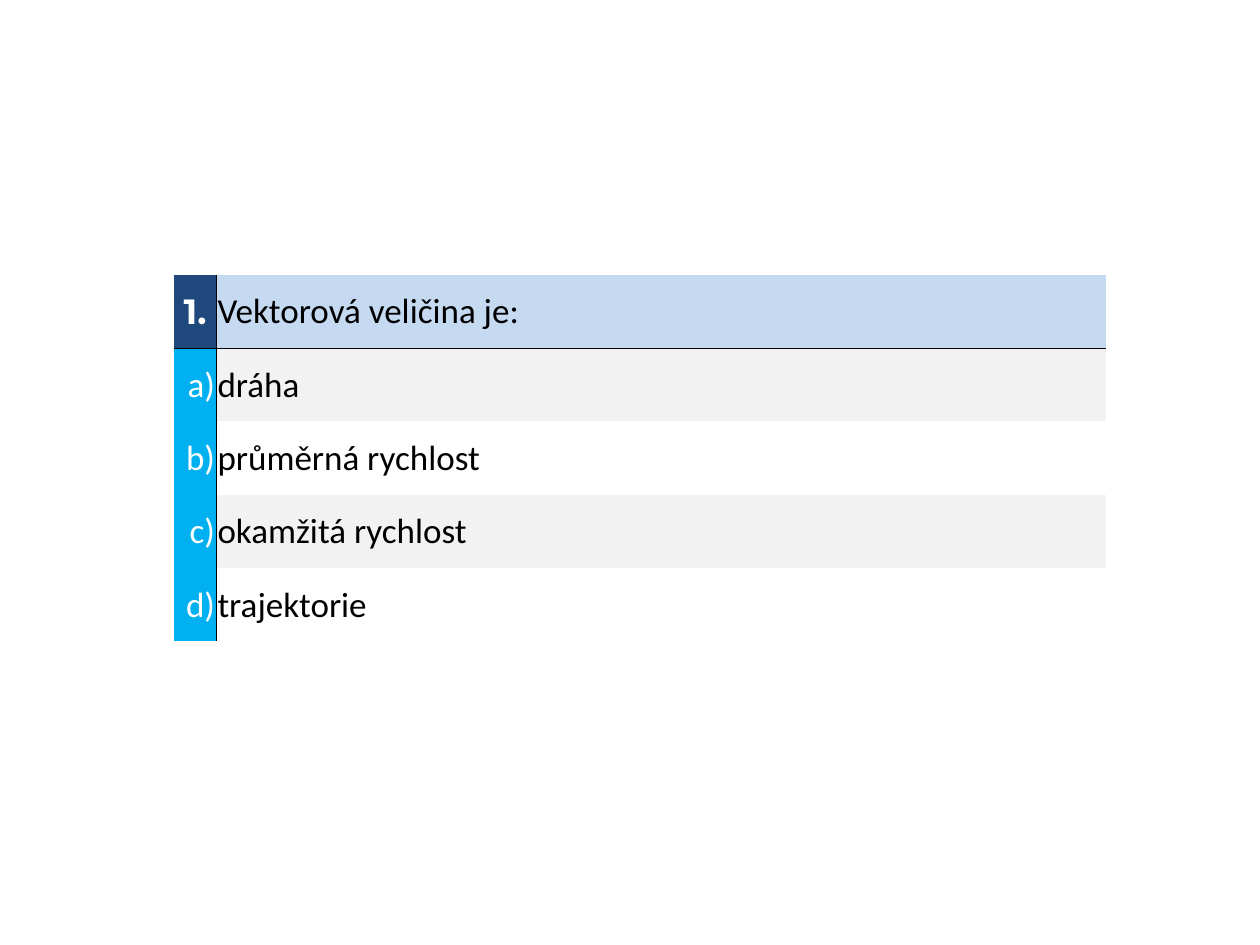
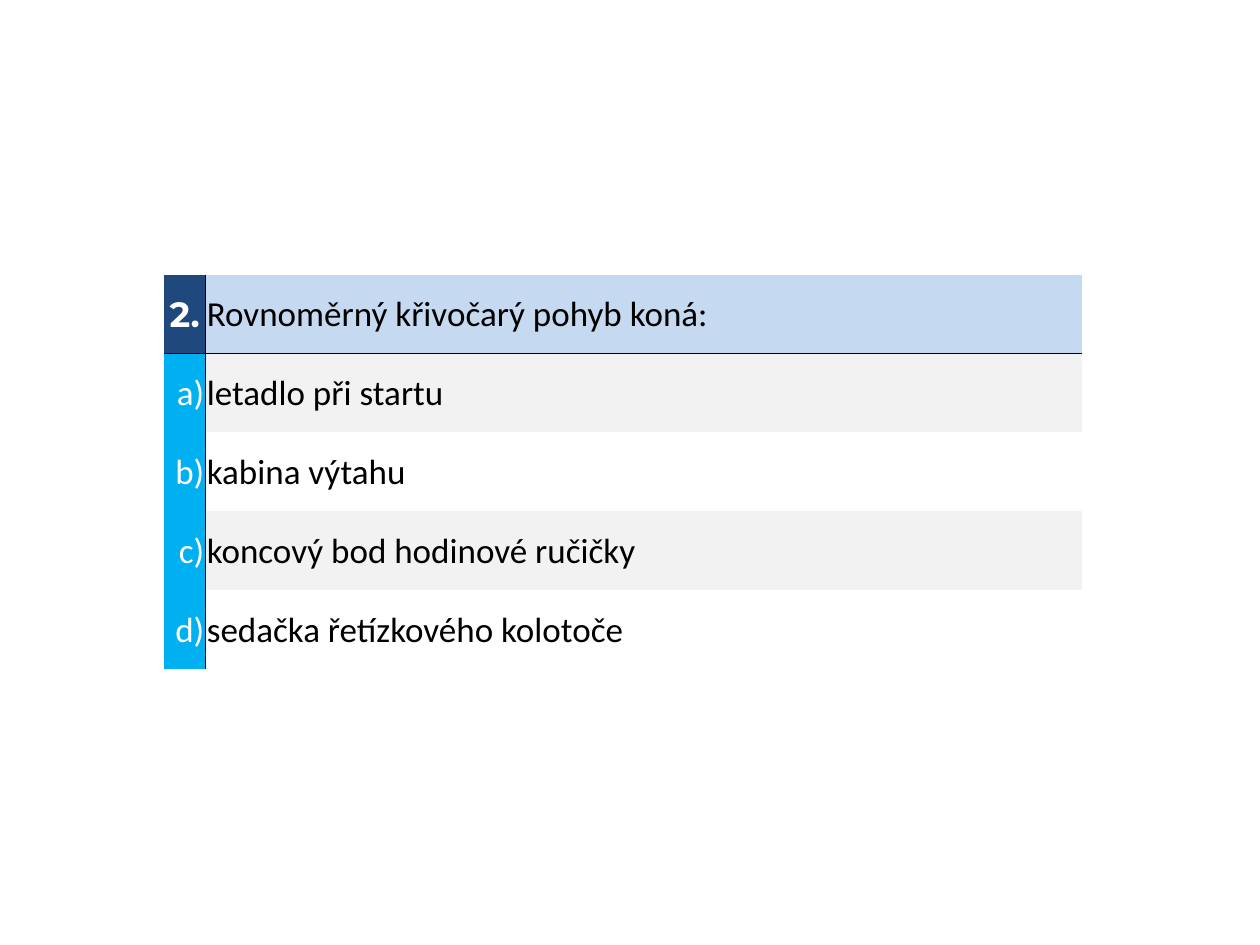
from dataclasses import dataclass

import lxml.etree
import pptx
import pptx.dml.color
import pptx.enum.text
import pptx.oxml.ns
import pptx.util

Inches = pptx.util.Inches
Align = pptx.enum.text.PP_ALIGN


@dataclass(frozen=True)
class Theme:
    number_fill: str = "1F497D"
    question_fill: str = "C5D9F1"
    letter_fill: str = "00B0F0"
    stripe_fill: str = "F2F2F2"
    light_text: str = "FFFFFF"
    dark_text: str = "000000"
    rule: str = "000000"
    rule_width: float = 0.5
    text_size: int = 20
    number_font: str = "Montserrat"
    text_font: str = "Calibri"


@dataclass(frozen=True)
class Box:
    left: float
    top: float
    width: float
    height: float


THEME = Theme()
LETTER_SHARE = 0.0455

QUESTIONS = [
    (Box(1.38, 2.18, 7.4, 2.91), "1.", "Vektorová veličina je:",
     ["dráha", "průměrná rychlost", "okamžitá rychlost", "trajektorie"]),
    (Box(1.3, 2.18, 7.29, 3.13), "2.", "Rovnoměrný křivočarý pohyb koná:",
     ["letadlo při startu", "kabina výtahu", "koncový bod hodinové ručičky",
      "sedačka řetízkového kolotoče"]),
]


def rgb(value):
    return pptx.dml.color.RGBColor.from_string(value)


def set_borders(cell, ruled_sides):
    qn = pptx.oxml.ns.qn
    properties = cell._tc.get_or_add_tcPr()
    for position, side in enumerate("LRTB"):
        border = lxml.etree.Element(qn(f"a:ln{side}"))
        if side in ruled_sides:
            border.set("w", str(pptx.util.Pt(THEME.rule_width)))
            fill = lxml.etree.SubElement(border, qn("a:solidFill"))
            lxml.etree.SubElement(fill, qn("a:srgbClr")).set("val", THEME.rule)
        else:
            lxml.etree.SubElement(border, qn("a:noFill"))
        properties.insert(position, border)


def fill_cell(cell, text, fill, color, align, borders, font=THEME.text_font, bold=False):
    cell.text = text
    cell.vertical_anchor = pptx.enum.text.MSO_ANCHOR.MIDDLE
    cell.margin_left = cell.margin_right = cell.margin_top = Inches(0.01)
    cell.margin_bottom = 0
    if fill:
        cell.fill.solid()
        cell.fill.fore_color.rgb = rgb(fill)
    else:
        cell.fill.background()
    paragraph = cell.text_frame.paragraphs[0]
    paragraph.alignment = align
    paragraph.font.name = font
    paragraph.font.size = pptx.util.Pt(THEME.text_size)
    paragraph.font.bold = bold
    paragraph.font.color.rgb = rgb(color)
    set_borders(cell, borders)


def add_question(slide, box, number, question, answers):
    row_count = len(answers) + 1
    quiz = slide.shapes.add_table(
        row_count, 2, Inches(box.left), Inches(box.top),
        Inches(box.width), Inches(box.height)).table
    quiz.first_row = quiz.horz_banding = False
    letter_width = box.width * LETTER_SHARE
    quiz.columns[0].width = Inches(letter_width)
    quiz.columns[1].width = Inches(box.width - letter_width)
    for row in quiz.rows:
        row.height = Inches(box.height / row_count)

    fill_cell(quiz.cell(0, 0), number, THEME.number_fill, THEME.light_text,
              Align.CENTER, "RB", THEME.number_font, True)
    fill_cell(quiz.cell(0, 1), question, THEME.question_fill, THEME.dark_text,
              Align.LEFT, "LB")
    for index, (letter, answer) in enumerate(zip("abcd", answers), start=1):
        top_rule = "T" if index == 1 else ""
        stripe = THEME.stripe_fill if index % 2 else None
        fill_cell(quiz.cell(index, 0), f"{letter})", THEME.letter_fill,
                  THEME.light_text, Align.RIGHT, "R" + top_rule)
        fill_cell(quiz.cell(index, 1), answer, stripe, THEME.dark_text,
                  Align.LEFT, "L" + top_rule)


def main():
    presentation = pptx.Presentation()
    presentation.slide_width = Inches(10)
    presentation.slide_height = Inches(7.5)
    for question in QUESTIONS:
        slide = presentation.slides.add_slide(presentation.slide_layouts[6])
        add_question(slide, *question)
    presentation.save("out.pptx")


if __name__ == "__main__":
    main()
